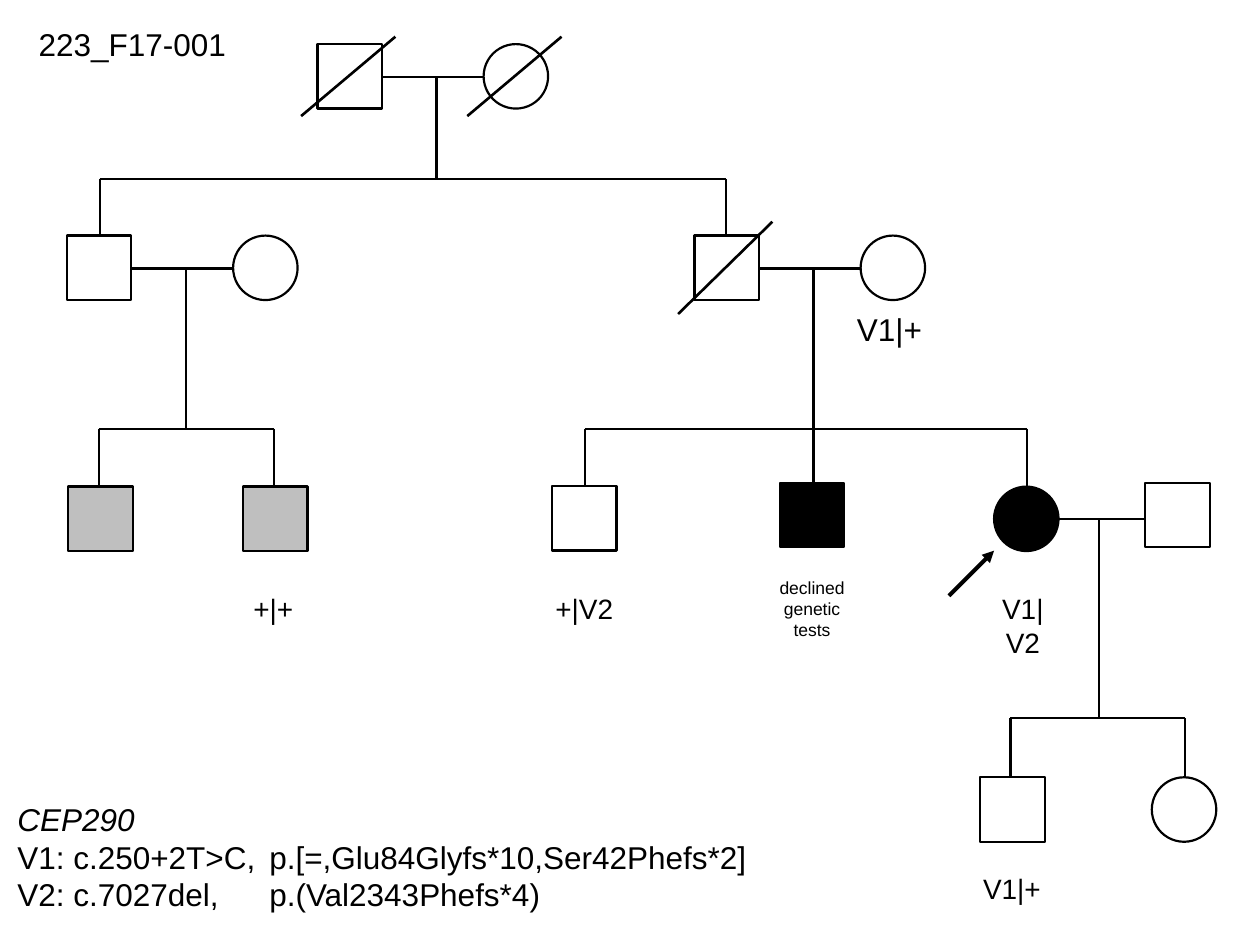
from lxml import etree
from pptx import Presentation
from pptx import util as u
from pptx.dml.color import RGBColor
from pptx.enum import shapes, text
from pptx.oxml import ns

BLACK, WHITE, GREY = "000000", "FFFFFF", "BFBFBF"
SQUARE, CIRCLE = shapes.MSO_SHAPE.RECTANGLE, shapes.MSO_SHAPE.OVAL
SYMBOL = 1.3
PARTNER_STEP = 3.35


def color(value):
    """Turn a hex string into a colour."""
    return RGBColor.from_string(value)


def add_line(slide, x1, y1, x2, y2, width=1.25, arrow=False):
    """Draw a black line, with an arrowhead at its end if wanted."""
    line = slide.shapes.add_connector(
        shapes.MSO_CONNECTOR.STRAIGHT, u.Cm(x1), u.Cm(y1), u.Cm(x2), u.Cm(y2))
    line.line.color.rgb = color(BLACK)
    line.line.width = u.Pt(width)
    properties = line._element.spPr
    if arrow:
        tail = etree.SubElement(line.line._get_or_add_ln(), ns.qn("a:tailEnd"))
        tail.set("type", "triangle")
    etree.SubElement(properties, ns.qn("a:effectLst"))


def add_person(slide, kind, left, top, fill=WHITE):
    """Draw one family member as a square or a circle."""
    shape = slide.shapes.add_shape(
        kind, u.Cm(left), u.Cm(top), u.Cm(SYMBOL), u.Cm(SYMBOL))
    shape.shadow.inherit = False
    shape.fill.solid()
    shape.fill.fore_color.rgb = color(fill)
    shape.line.color.rgb = color(BLACK)
    shape.line.width = u.Pt(1.25)


def add_deceased_mark(slide, left, top, reach=0.8):
    """Strike through the symbol whose corner is given."""
    middle = top + SYMBOL / 2
    add_line(slide, left - 0.33, middle + reach, left + 1.57, middle - reach, 1.5)


def add_text(slide, left, top, width, height, paragraphs, size,
             align=text.PP_ALIGN.CENTER, wrap=False):
    """Write paragraphs given as pairs of wording and italic flag."""
    box = slide.shapes.add_textbox(u.Cm(left), u.Cm(top), u.Cm(width), u.Cm(height))
    frame = box.text_frame
    frame.word_wrap = wrap
    frame.auto_size = text.MSO_AUTO_SIZE.SHAPE_TO_FIT_TEXT
    for index, (wording, italic) in enumerate(paragraphs):
        paragraph = frame.add_paragraph() if index else frame.paragraphs[0]
        paragraph.alignment = align
        run = paragraph.add_run()
        run.text = wording
        run.font.name = "Arial"
        run.font.size = u.Pt(size)
        run.font.italic = italic
        run.font.color.rgb = color(BLACK)


def add_genotype(slide, center, top, wording, size=16):
    """Write a genotype centred below a symbol."""
    add_text(slide, center - 1, top, 2, 0.94, [(wording, False)], size)


def add_couple(slide, left, top, descent_bottom):
    """Draw a father, a mother, their bond and the line of descent."""
    middle = top + 0.66
    add_line(slide, left + SYMBOL, middle, left + PARTNER_STEP, middle, 1.5)
    add_person(slide, SQUARE, left, top)
    add_person(slide, CIRCLE, left + PARTNER_STEP, top)
    add_line(slide, left + 2.4, middle, left + 2.4, descent_bottom)


def add_sibling_lines(slide, left, top, right, bottom):
    """Draw the sibling bar with a drop at each end."""
    add_line(slide, left, top, right, top)
    for x in (left, right):
        add_line(slide, x, top, x, bottom)


def add_grandparents(slide, left, top):
    """Draw the deceased founders and the bar to their sons."""
    add_couple(slide, left, top, top + 2.7)
    for x in (left, left + PARTNER_STEP):
        add_deceased_mark(slide, x, top)
    add_sibling_lines(slide, left - 4.39, top + 2.72, left + 8.23, top + 3.86)


def add_left_branch(slide, left, top):
    """Draw the first son's family."""
    add_couple(slide, left, top, top + 3.87)
    add_sibling_lines(slide, left + 0.64, top + 3.89, left + 4.17, top + 5.05)
    for x in (left + 0.03, left + 3.55):
        add_person(slide, SQUARE, x, top + 5.06, GREY)
    add_genotype(slide, left + 4.16, top + 7.06, "+|+")


def add_right_branch(slide, left, top):
    """Draw the second son's family with the proband."""
    add_couple(slide, left, top, top + 5)
    add_deceased_mark(slide, left, top, 0.93)
    add_genotype(slide, left + 3.93, top + 1.37, "V1|+", 18)
    add_sibling_lines(slide, left - 2.21, top + 3.89, left + 6.71, top + 5.05)
    add_person(slide, SQUARE, left - 2.87, top + 5.05)
    add_person(slide, SQUARE, left + 1.72, top + 4.98, BLACK)
    add_person(slide, CIRCLE, left + 6.04, top + 5.06, BLACK)
    add_genotype(slide, left - 2.22, top + 7.06, "+|V2")
    add_genotype(slide, left + 6.62, top + 7.06, "V1|V2")
    add_text(slide, left + 1.34, top + 6.76, 2.06, 1.55,
             [("declined genetic tests", False)], 10, wrap=True)
    add_line(slide, left + 5.13, top + 7.26, left + 6.04, top + 6.35, 2.25, True)


def add_proband_family(slide, left, top):
    """Draw the proband's partner and children."""
    middle = top + 0.73
    add_line(slide, left + SYMBOL, middle, left + 3.33, middle, 1.5)
    add_person(slide, SQUARE, left + 3.33, top)
    add_line(slide, left + 2.39, middle, left + 2.39, top + 4.73)
    add_sibling_lines(slide, left + 0.61, top + 4.75, left + 4.12, top + 5.93)
    add_person(slide, SQUARE, left, top + 5.94)
    add_person(slide, CIRCLE, left + 3.46, top + 5.94)
    add_genotype(slide, left + 0.64, top + 7.72, "V1|+")


def add_variant_legend(slide, left, top):
    """Write the gene and its variants."""
    add_text(slide, left, top, 15.34, 2.56, [
        ("CEP290", True),
        ("V1: c.250+2T>C, \tp.[=,Glu84Glyfs*10,Ser42Phefs*2]", False),
        ("V2: c.7027del,\tp.(Val2343Phefs*4)", False),
    ], 18, text.PP_ALIGN.LEFT)


def main():
    """Build the pedigree slide."""
    presentation = Presentation()
    presentation.slide_width, presentation.slide_height = u.Cm(25.4), u.Cm(19.05)
    slide = presentation.slides.add_slide(presentation.slide_layouts[6])
    add_grandparents(slide, 6.4, 0.89)
    add_left_branch(slide, 1.35, 4.75)
    add_right_branch(slide, 14, 4.75)
    add_proband_family(slide, 19.76, 9.73)
    add_variant_legend(slide, 0.1, 16)
    add_text(slide, 0.53, 0.38, 4.5, 1.02, [("223_F17-001", False)], 18,
             text.PP_ALIGN.LEFT)
    presentation.save("out.pptx")


if __name__ == "__main__":
    main()
